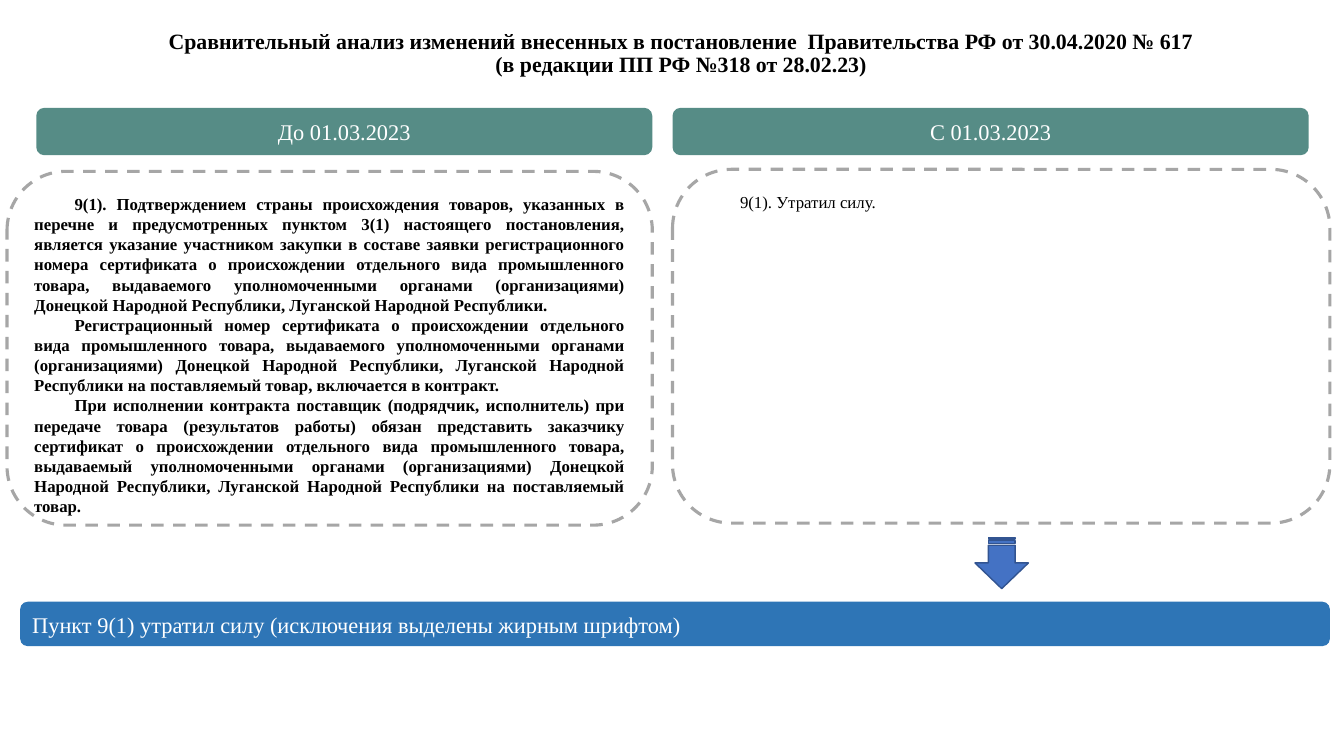
from dataclasses import dataclass

from pptx import Presentation
from pptx.dml.color import RGBColor
from pptx.enum import dml, shapes, text
from pptx.util import Inches, Pt


@dataclass(frozen=True)
class Theme:
    font: str = "Times New Roman"
    black: str = "000000"
    white: str = "FFFFFF"
    header: str = "568C86"
    outline: str = "A6A6A6"
    arrow: str = "4472C4"
    arrow_edge: str = "325491"
    conclusion: str = "2E75B6"
    title_size: float = 15.6
    bar_size: float = 16
    body_size: float = 12


THEME = Theme()

TITLE = [
    "Сравнительный анализ изменений внесенных в постановление  Правительства РФ от 30.04.2020 № 617",
    "(в редакции ПП РФ №318 от 28.02.23)",
]
BEFORE = [
    "9(1). Подтверждением страны происхождения товаров, указанных в перечне и предусмотренных "
    "пунктом 3(1) настоящего постановления, является указание участником закупки в составе заявки "
    "регистрационного номера сертификата о происхождении отдельного вида промышленного товара, "
    "выдаваемого уполномоченными органами (организациями) Донецкой Народной Республики, "
    "Луганской Народной Республики.",
    "Регистрационный номер сертификата о происхождении отдельного вида промышленного товара, "
    "выдаваемого уполномоченными органами (организациями) Донецкой Народной Республики, "
    "Луганской Народной Республики на поставляемый товар, включается в контракт.",
    "При исполнении контракта поставщик (подрядчик, исполнитель) при передаче товара (результатов "
    "работы) обязан представить заказчику сертификат о происхождении отдельного вида промышленного "
    "товара, выдаваемый уполномоченными органами (организациями) Донецкой Народной Республики, "
    "Луганской Народной Республики на поставляемый товар.",
]
AFTER = ["9(1). Утратил силу."]
CONCLUSION = "Пункт 9(1) утратил силу (исключения выделены жирным шрифтом)"


def set_all(target, values):
    for name, value in values.items():
        setattr(target, name, value)


def write(frame, lines, size, color, align, anchor, bold=False, indent=0, spacing=1.0):
    set_all(frame, {"word_wrap": True, "auto_size": text.MSO_AUTO_SIZE.NONE,
                    "vertical_anchor": anchor})
    frame.text = "\n".join(lines)
    for paragraph in frame.paragraphs:
        set_all(paragraph, {"alignment": align, "line_spacing": spacing,
                            "space_before": Pt(0)})
        set_all(paragraph.font, {"name": THEME.font, "size": Pt(size), "bold": bold})
        paragraph.font.color.rgb = RGBColor.from_string(color)
        if indent:
            paragraph._p.get_or_add_pPr().set("indent", str(Inches(indent)))


def add_box(slide, kind, box, fill=None, line=None, width=1):
    shape = slide.shapes.add_shape(kind, *map(Inches, box))
    shape.shadow.inherit = False
    for part, color in ((shape.fill, fill), (shape.line.fill, line)):
        if color:
            part.solid()
            part.fore_color.rgb = RGBColor.from_string(color)
        else:
            part.background()
    if line:
        shape.line.width = Pt(width)
    return shape


def add_title(slide, box):
    title = slide.shapes.title
    set_all(title, dict(zip(("left", "top", "width", "height"), map(Inches, box))))
    write(title.text_frame, TITLE, THEME.title_size, THEME.black, text.PP_ALIGN.CENTER,
          text.MSO_ANCHOR.BOTTOM, bold=True, spacing=0.9)
    title.text_frame.margin_bottom = Inches(0.28)


def add_bar(slide, box, caption, fill, align, spacing=1.0):
    bar = add_box(slide, shapes.MSO_SHAPE.ROUNDED_RECTANGLE, box, fill)
    write(bar.text_frame, [caption], THEME.bar_size, THEME.white, align,
          text.MSO_ANCHOR.MIDDLE, spacing=spacing)


def add_panel(slide, box, lines, bold):
    panel = add_box(slide, shapes.MSO_SHAPE.ROUNDED_RECTANGLE, box,
                    line=THEME.outline, width=2.25)
    panel.line.dash_style = dml.MSO_LINE.DASH
    write(panel.text_frame, lines, THEME.body_size, THEME.black, text.PP_ALIGN.JUSTIFY,
          text.MSO_ANCHOR.TOP, bold=bold, indent=0.4)


def add_column(slide, box, header_left, header_width, caption, lines, bold=False):
    """Dashed panel in the box, header bar above it."""
    add_panel(slide, box, lines, bold)
    add_bar(slide, (header_left, 1.07, header_width, 0.47), caption, THEME.header,
            text.PP_ALIGN.CENTER)


def add_conclusion(slide, box):
    """Blue bar in the box, down arrow above it."""
    left, top, width, height = box
    arrow = add_box(slide, shapes.MSO_SHAPE.STRIPED_RIGHT_ARROW,
                    (left + 9.48, top - 0.65, 0.51, 0.53), THEME.arrow, THEME.arrow_edge)
    arrow.rotation = 90
    add_bar(slide, box, CONCLUSION, THEME.conclusion, text.PP_ALIGN.JUSTIFY, spacing=1.07)


def main():
    presentation = Presentation()
    set_all(presentation, {"slide_width": Inches(13.33), "slide_height": Inches(7.5)})
    slide = presentation.slides.add_slide(presentation.slide_layouts.get_by_name("Title Only"))

    add_title(slide, (0.42, -0.04, 12.67, 1.09))
    # Comparison columns
    add_column(slide, (0.07, 1.7, 6.4, 3.51), 0.36, 6.11, "До 01.03.2023", BEFORE, bold=True)
    add_column(slide, (6.67, 1.68, 6.52, 3.51), 6.67, 6.31, "С 01.03.2023", AFTER)
    add_conclusion(slide, (0.2, 5.97, 12.99, 0.44))

    presentation.save("out.pptx")


if __name__ == "__main__":
    main()
